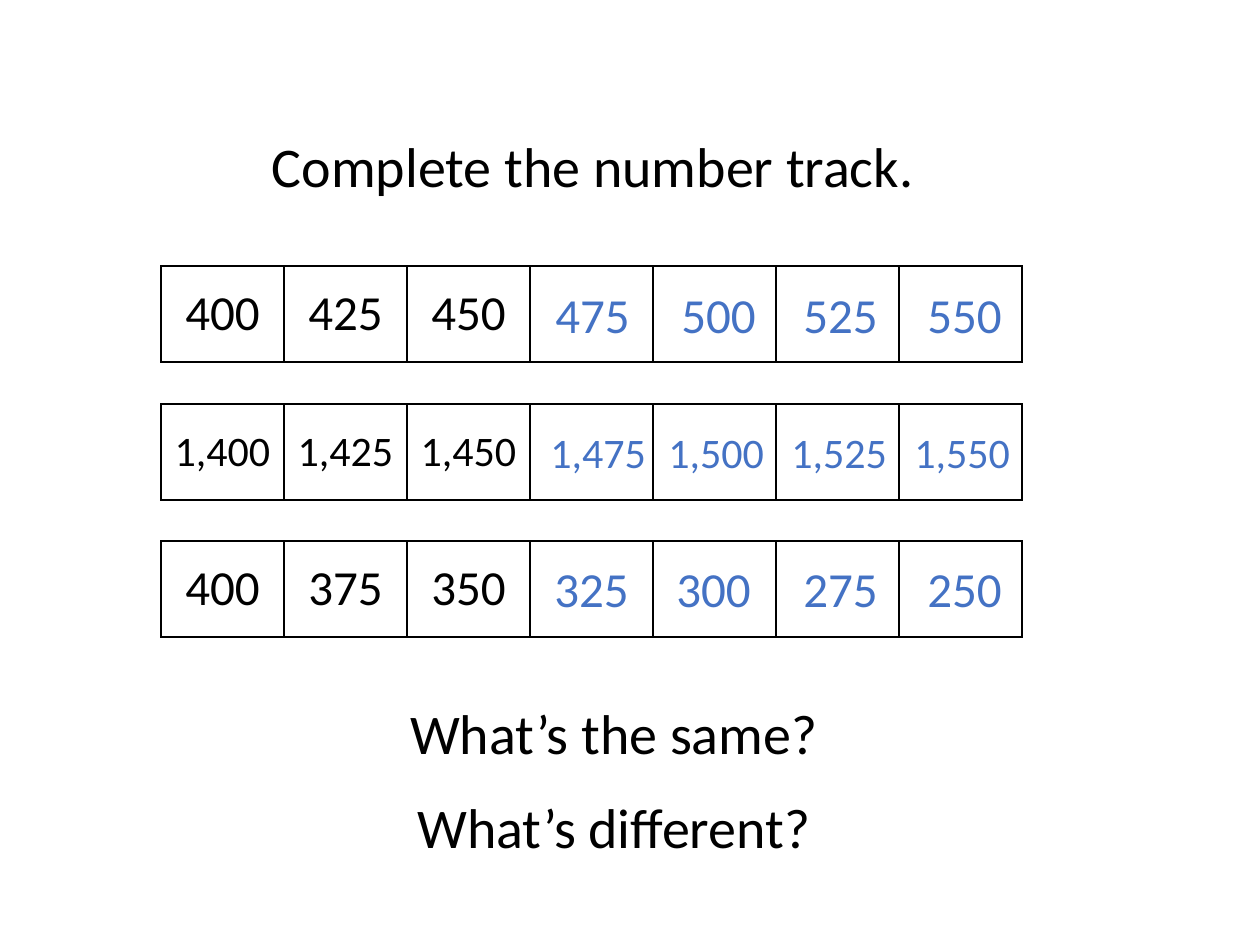
from typing import NamedTuple

from lxml.etree import SubElement
from pptx import Presentation
from pptx.dml.color import RGBColor
from pptx.enum.text import MSO_ANCHOR as Anchor, MSO_AUTO_SIZE as AutoSize, PP_ALIGN as Align
from pptx.oxml.ns import qn
from pptx.util import Emu, Pt

PX = 914400 / 126
BLACK, BLUE = "000000", "4472C4"
TRACK_LEFT, CELL_W, CELL_H, CELLS = 161, 123, 96, 7


class Answer(NamedTuple):
    text: str
    left: int
    width: int = 110


class Track(NamedTuple):
    top: int
    size: int
    given: tuple[str, ...]
    answer_top: int
    answer_height: int
    answers: tuple[Answer, ...]


TRACKS = (
    Track(266, 28, ("400", "425", "450"), 278, 72,
          (Answer("475", 543), Answer("500", 669), Answer("525", 791), Answer("550", 915))),
    Track(404, 24, ("1,400", "1,425", "1,450"), 420, 63,
          (Answer("1,475", 538, 151), Answer("1,500", 656, 126),
           Answer("1,525", 779, 126), Answer("1,550", 902, 137))),
    Track(541, 28, ("400", "375", "350"), 552, 72,
          (Answer("325", 542), Answer("300", 664), Answer("275", 791), Answer("250", 915))),
)
QUESTIONS = (("What’s the same?", 692), ("What’s different?", 786))


def px(n: int) -> Emu:
    """Turn whole pixels into EMU."""
    return Emu(round(n * PX))


def rgb(code: str) -> RGBColor:
    """Turn a hex string into a colour."""
    return RGBColor.from_string(code)


def write(tf, text: str, size: int, color: str, align: Align) -> None:
    """Set one paragraph of text and format its run."""
    tf.text = text
    p = tf.paragraphs[0]
    p.alignment = align
    font = p.runs[0].font
    font.name, font.size, font.bold = "Calibri", Pt(size), False
    font.color.rgb = rgb(color)


def fit(tf) -> None:
    """Make a text frame wrap and start at its top."""
    tf.word_wrap = True
    tf.auto_size = AutoSize.SHAPE_TO_FIT_TEXT
    tf.vertical_anchor = Anchor.TOP


def add_text(s, text: str, left: int, top: int, width: int, height: int,
             size: int, color: str, align: Align) -> None:
    """Add a text box holding one line."""
    tf = s.shapes.add_textbox(px(left), px(top), px(width), px(height)).text_frame
    fit(tf)
    write(tf, text, size, color, align)


def outline(cell, color: str) -> None:
    """Draw a one-point border on every side of a cell."""
    tc_pr = cell._tc.get_or_add_tcPr()
    for i, side in enumerate(("lnL", "lnR", "lnT", "lnB")):
        ln = SubElement(tc_pr, qn(f"a:{side}"), w=str(Pt(1)))
        fill = SubElement(ln, qn("a:solidFill"))
        SubElement(fill, qn("a:srgbClr"), val=color)
        tc_pr.insert(i, ln)


def add_track(s, track: Track) -> None:
    """Add a number track and the answers laid over its empty cells."""
    table = s.shapes.add_table(1, CELLS, px(TRACK_LEFT), px(track.top),
                               px(CELL_W * CELLS), px(CELL_H)).table
    table.first_row = table.horz_banding = False
    for col in table.columns:
        col.width = px(CELL_W)
    for cell in table.iter_cells():
        cell.fill.background()
        cell.vertical_anchor = Anchor.MIDDLE
        outline(cell, BLACK)
    for cell, text in zip(table.iter_cells(), track.given):
        write(cell.text_frame, text, track.size, BLACK, Align.CENTER)
    for a in track.answers:
        add_text(s, a.text, a.left, track.answer_top, a.width, track.answer_height,
                 track.size, BLUE, Align.LEFT)


def main() -> None:
    """Build the number track slide."""
    prs = Presentation()
    prs.slide_width, prs.slide_height = px(1260), px(945)
    s = prs.slides.add_slide(prs.slide_layouts[5])
    title = s.shapes.title
    title.left, title.top, title.width, title.height = px(42), px(125), px(1102), px(81)
    fit(title.text_frame)
    write(title.text_frame, "Complete the number track.", 32, BLACK, Align.CENTER)
    for track in TRACKS:
        add_track(s, track)
    for text, top in QUESTIONS:
        add_text(s, text, 63, top, 1102, 81, 32, BLACK, Align.CENTER)
    prs.save("out.pptx")


if __name__ == "__main__":
    main()
